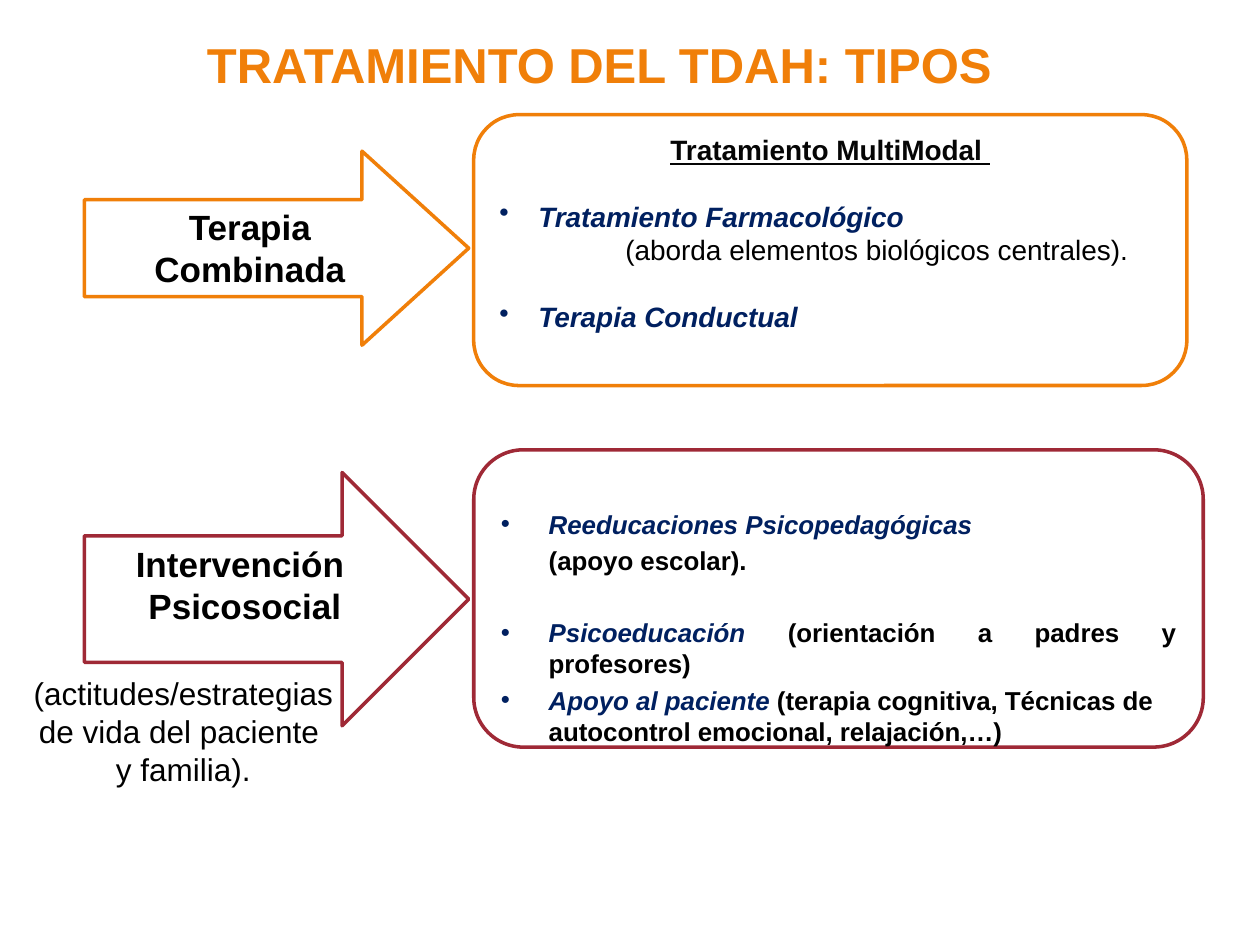
import pptx
import pptx.util
import pptx.dml.color
import pptx.enum.shapes
import pptx.enum.text
import pptx.oxml
import pptx.oxml.ns

Inches, Pt = pptx.util.Inches, pptx.util.Pt
SHAPE = pptx.enum.shapes.MSO_SHAPE
ALIGN = pptx.enum.text.PP_ALIGN
ANCHOR = pptx.enum.text.MSO_ANCHOR

THEME = {
    "font": "Arial", "line": 2,
    "orange": "F07F09", "red": "9F2936", "navy": "002060",
    "black": "000000", "ink": "050505", "white": "FFFFFF",
    "title": 28, "arrow": 20, "caption": 18, "box": 16, "body": 14.8,
}

# Content: a paragraph is (runs, options); a run is (text, colour, styles)
TITLE = [([("TRATAMIENTO DEL TDAH: TIPOS ", "orange", "b")], {})]
COMBINED = [([(t, "black", "b")], {}) for t in ("Terapia", "Combinada")]
PSYCHOSOCIAL = [([(t, "black", "b")], {}) for t in ("Intervención ", "Psicosocial")]
CAPTION = [([(t, "black", "")], {}) for t in
           ("(actitudes/estrategias", "de vida del paciente ", "y familia).")]
MULTIMODAL = [
    ([("Tratamiento MultiModal ", "ink", "bu")], {"align": ALIGN.CENTER}),
    ([("Tratamiento Farmacológico", "navy", "bi")],
     {"bullet": True, "indent": 0.31, "before": 19}),
    ([("(aborda elementos biológicos centrales).", "black", "")], {"indent": 1}),
    ([("Terapia Conductual", "navy", "bi")],
     {"bullet": True, "indent": 0.31, "before": 19}),
]
SUPPORT = [
    ([("Reeducaciones Psicopedagógicas", "navy", "bi")],
     {"bullet": True, "indent": 0.38}),
    ([("(apoyo escolar).", "black", "b")], {"indent": 0.38, "before": 3}),
    ([("Psicoeducación ", "navy", "bi"),
      ("(orientación a padres y profesores)", "black", "b")],
     {"bullet": True, "indent": 0.38, "before": 23.5, "align": ALIGN.JUSTIFY}),
    ([("Apoyo al paciente ", "navy", "bi"),
      ("(terapia cognitiva, Técnicas de autocontrol emocional, relajación,…)",
       "black", "b")], {"bullet": True, "indent": 0.38, "before": 3}),
]


def rgb(name):
    return pptx.dml.color.RGBColor.from_string(THEME[name])


def place(s, left, top, width, height):
    s.left, s.top = Inches(left), Inches(top)
    s.width, s.height = Inches(width), Inches(height)


def outline(s, color):
    s.fill.solid()
    s.fill.fore_color.rgb = rgb("white")
    s.line.color.rgb = rgb(color)
    s.line.width = Pt(THEME["line"])


def set_indent(p, indent, bullet):
    pPr = p._p.get_or_add_pPr()
    pPr.set("marL", str(Inches(indent)))
    pPr.set("indent", str(-Inches(indent) if bullet else 0))
    tag = '<a:buChar %s char="•"/>' if bullet else "<a:buNone %s/>"
    pPr.append(pptx.oxml.parse_xml(tag % pptx.oxml.ns.nsdecls("a")))


def write(s, paragraphs, size, align=ALIGN.CENTER, anchor=ANCHOR.TOP):
    tf = s.text_frame
    tf.word_wrap = True
    tf.auto_size = pptx.enum.text.MSO_AUTO_SIZE.NONE
    tf.vertical_anchor = anchor
    for i, (runs, opt) in enumerate(paragraphs):
        p = tf.add_paragraph() if i else tf.paragraphs[0]
        p.alignment = opt.get("align", align)
        p.space_before = Pt(opt.get("before", 0))
        set_indent(p, opt.get("indent", 0), opt.get("bullet", False))
        for text, color, styles in runs:
            r = p.add_run()
            r.text = text
            r.font.name, r.font.size = THEME["font"], Pt(THEME[size])
            r.font.color.rgb = rgb(color)
            r.font.bold = "b" in styles
            r.font.italic = "i" in styles
            r.font.underline = "u" in styles


def add_outlined(shapes, kind, box, color):
    s = shapes.add_shape(kind, *map(Inches, box))
    s.shadow.inherit = False
    outline(s, color)
    return s


prs = pptx.Presentation()
prs.slide_width, prs.slide_height = Inches(10), Inches(7.5)
slide = prs.slides.add_slide(prs.slide_layouts[1])
shapes = slide.shapes

# Title
place(shapes.title, 0.31, 0, 9, 1.02)
write(shapes.title, TITLE, "title", anchor=ANCHOR.MIDDLE)

# Psychosocial list: body placeholder with rounded outline
body = slide.placeholders[1]
place(body, 3.76, 3.57, 5.79, 2.36)
body._element.spPr.append(pptx.oxml.parse_xml(
    '<a:prstGeom %s prst="roundRect"><a:avLst/></a:prstGeom>'
    % pptx.oxml.ns.nsdecls("a")))
outline(body, "red")
write(body, SUPPORT, "body", ALIGN.LEFT)
body.text_frame.margin_top = Inches(0.35)

# Arrows
arrow = add_outlined(shapes, SHAPE.RIGHT_ARROW, (0.67, 3.75, 3.05, 2.01), "red")
write(arrow, PSYCHOSOCIAL, "arrow")
arrow = add_outlined(shapes, SHAPE.RIGHT_ARROW, (0.67, 1.2, 3.05, 1.54), "orange")
arrow.adjustments[1] = 0.55
write(arrow, COMBINED, "arrow")

# Multimodal treatment box
box = add_outlined(shapes, SHAPE.ROUNDED_RECTANGLE, (3.76, 0.91, 5.66, 2.15), "orange")
write(box, MULTIMODAL, "box", ALIGN.LEFT, ANCHOR.MIDDLE)
box.text_frame.margin_bottom = Inches(0.32)

# Caption under the lower arrow
caption = shapes.add_textbox(*map(Inches, (0, 5.3, 2.91, 1.01)))
write(caption, CAPTION, "caption")

prs.save("out.pptx")
